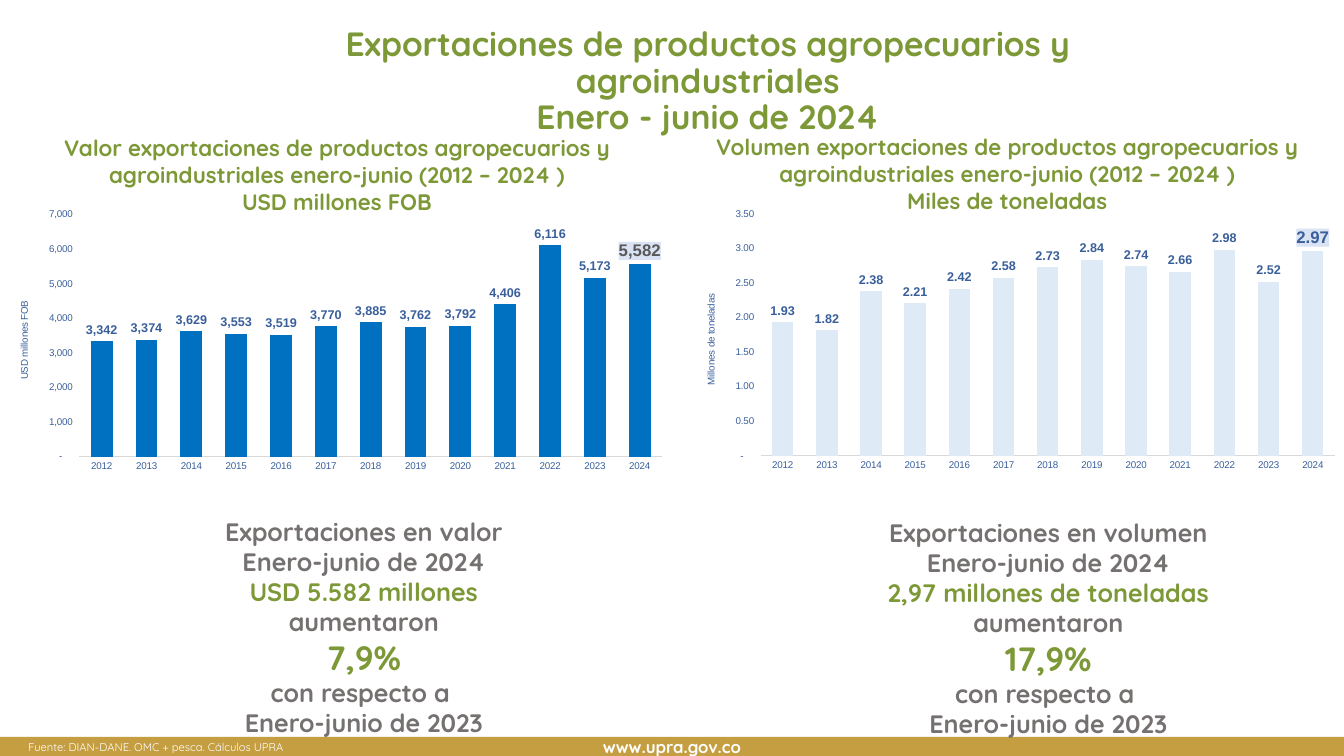
from lxml.etree import SubElement
from pptx import Presentation
from pptx.chart.data import CategoryChartData
from pptx.dml.color import RGBColor
from pptx.enum.chart import XL_CHART_TYPE as CT, XL_LABEL_POSITION as LP, XL_TICK_MARK as TM
from pptx.enum.shapes import MSO_SHAPE
from pptx.enum.text import MSO_ANCHOR, PP_ALIGN
from pptx.oxml import parse_xml
from pptx.oxml.ns import nsdecls, qn
from pptx.util import Cm, Pt

COLORS = {
    "green": "7D9837", "gray": "767171", "gold": "C59E41", "white": "FFFFFF",
    "navy": "395F9B", "axis": "D9D9D9", "blue": "0070C0", "pale": "DEEBF7",
    "highlight": "DAE3F3", "dark": "595959", "black": "000000",
}
YEARS = [str(y) for y in range(2012, 2025)]


def rgb(name):
    return RGBColor.from_string(COLORS[name])


class Deck:
    heading_font = "Quicksand"
    chart_font = "Arial"

    def __init__(self, width, height):
        self.prs = Presentation()
        self.prs.slide_width, self.prs.slide_height = Cm(width), Cm(height)
        self.s = self.prs.slides.add_slide(self.prs.slide_layouts[6])

    def style(self, font, name, size, color, bold=False):
        font.name, font.size, font.bold = name, Pt(size), bold
        font.color.rgb = rgb(color)

    def fill_text(self, tf, lines, align=PP_ALIGN.CENTER, bold=True, spacing=None):
        tf.word_wrap = True
        for i, (text, size, color) in enumerate(lines):
            p = tf.add_paragraph() if i else tf.paragraphs[0]
            p.text, p.alignment = text, align
            if spacing:
                p.line_spacing = spacing
            self.style(p.font, self.heading_font, size, color, bold)

    def text(self, box, lines, **options):
        sp = self.s.shapes.add_textbox(*map(Cm, box))
        self.fill_text(sp.text_frame, lines, **options)

    def bar(self, box, fill, lines):
        sp = self.s.shapes.add_shape(MSO_SHAPE.RECTANGLE, *map(Cm, box))
        sp.shadow.inherit = False
        sp.fill.solid()
        sp.fill.fore_color.rgb = rgb(fill)
        sp.line.fill.background()
        sp.text_frame.vertical_anchor = MSO_ANCHOR.MIDDLE
        self.fill_text(sp.text_frame, lines)

    def axis(self, axis):
        axis.major_tick_mark = axis.minor_tick_mark = TM.NONE
        axis.has_major_gridlines = False
        self.style(axis.tick_labels.font, self.chart_font, 7, "navy")

    def chart(self, box, values, unit, fmt, label_fmt, color, last_color, plot_top):
        data = CategoryChartData(number_format=label_fmt)
        data.categories = YEARS
        data.add_series(unit, values)
        chart = self.s.shapes.add_chart(CT.COLUMN_CLUSTERED, *map(Cm, box), data).chart
        chart.has_legend = chart.has_title = False
        self.style(chart.font, self.chart_font, 10, "black")

        cat, val = chart.category_axis, chart.value_axis
        self.axis(cat)
        cat.format.line.color.rgb = rgb("axis")
        cat.format.line.width = Pt(0.75)
        self.axis(val)
        val.format.line.fill.background()
        val.minimum_scale = 0
        val.tick_labels.number_format = fmt
        val.tick_labels.number_format_is_linked = False
        p = val.axis_title.text_frame.paragraphs[0]
        p.text = unit
        self.style(p.font, self.chart_font, 7, "navy")

        plot = chart.plots[0]
        plot.gap_width, plot.overlap, plot.vary_by_categories = 105, 74, False
        series = plot.series[0]
        series.format.fill.solid()
        series.format.fill.fore_color.rgb = rgb(color)
        labels = series.data_labels
        labels.show_value, labels.position = True, LP.OUTSIDE_END
        labels.number_format, labels.number_format_is_linked = label_fmt, False
        self.style(labels.font, self.chart_font, 9, "navy", True)
        self.highlight(series.points[len(values) - 1].data_label, label_fmt, last_color)
        self.layout(chart, plot_top)

    def highlight(self, label, fmt, color):
        self.style(label.font, self.chart_font, 12, color, True)
        label.position = LP.OUTSIDE_END
        tx = next(label.font._element.iterancestors(qn("c:txPr")))
        num = parse_xml(f'<c:numFmt {nsdecls("c")} sourceLinked="0"/>')
        num.set("formatCode", fmt)
        tx.addprevious(num)
        tx.addprevious(parse_xml(
            f'<c:spPr {nsdecls("c", "a")}><a:solidFill>'
            f'<a:srgbClr val="{COLORS["highlight"]}"/></a:solidFill></c:spPr>'))

    def layout(self, chart, top):
        area = chart._chartSpace.chart.plotArea
        for old in area.findall(qn("c:layout")):
            area.remove(old)
        layout = parse_xml(f'<c:layout {nsdecls("c")}/>')
        manual = SubElement(layout, qn("c:manualLayout"))
        for tag, value in (("layoutTarget", "inner"), ("xMode", "edge"), ("yMode", "edge"),
                           ("x", 0.122), ("y", top), ("w", 0.862), ("h", 0.698)):
            SubElement(manual, qn(f"c:{tag}")).set("val", str(value))
        area.insert(0, layout)


def summary(subject, amount, change):
    return [
        (f"Exportaciones en {subject}", 18, "gray"),
        ("Enero-junio de 2024", 18, "gray"),
        (amount, 18, "green"),
        ("aumentaron", 18, "gray"),
        (change, 24, "green"),
        ("con respecto a ", 18, "gray"),
        ("Enero-junio de 2023", 18, "gray"),
    ]


def heading(subject, unit):
    return [
        (f"{subject} exportaciones de productos agropecuarios y "
         "agroindustriales enero-junio (2012 – 2024 )", 16, "green"),
        (unit, 16, "green"),
    ]


def main():
    deck = Deck(33.87, 19.05)
    deck.bar((0, 18.57, 33.87, 0.48), "gold", [("www.upra.gov.co", 12, "white")])
    deck.text((6.2, 0.58, 23.27, 2.72), [
        ("Exportaciones de productos agropecuarios y agroindustriales\v"
         "Enero - junio de 2024", 24, "green")], spacing=0.9)
    deck.text((0.05, 3.25, 16.89, 2.31), heading("Valor", "USD millones FOB"))
    deck.text((16.94, 3.23, 16.89, 2.31), heading("Volumen", "Miles de toneladas"))
    deck.text((20.96, 12.9, 10.92, 5.89),
              summary("volumen", "2,97 millones de toneladas", "17,9%"))
    deck.text((3.71, 12.88, 10.92, 5.89), summary("valor", "USD 5.582 millones", "7,9%"))
    deck.text((0.46, 18.52, 32.79, 0.61),
              [("Fuente: DIAN-DANE. OMC + pesca. Cálculos UPRA", 8, "white")],
              align=PP_ALIGN.JUSTIFY, bold=False)
    deck.chart((-0.08, 4.52, 17.04, 8.74),
               (3342, 3374, 3629, 3553, 3519, 3770, 3885, 3762, 3792, 4406, 6116, 5173, 5582),
               "USD millones FOB", '_-* #,##0_-;\\-* #,##0_-;_-* "-"??_-;_-@_-',
               "#,##0", "blue", "dark", 0.102)
    deck.chart((17.12, 4.57, 16.79, 8.74),
               (1.93, 1.82, 2.38, 2.21, 2.42, 2.58, 2.73, 2.84, 2.74, 2.66, 2.98, 2.52, 2.97),
               "Millones de toneladas", '_(* #,##0.00_);_(* \\(#,##0.00\\);_(* "-"??_);_(@_)',
               "#,##0.00", "pale", "navy", 0.094)
    deck.prs.save("out.pptx")


if __name__ == "__main__":
    main()
